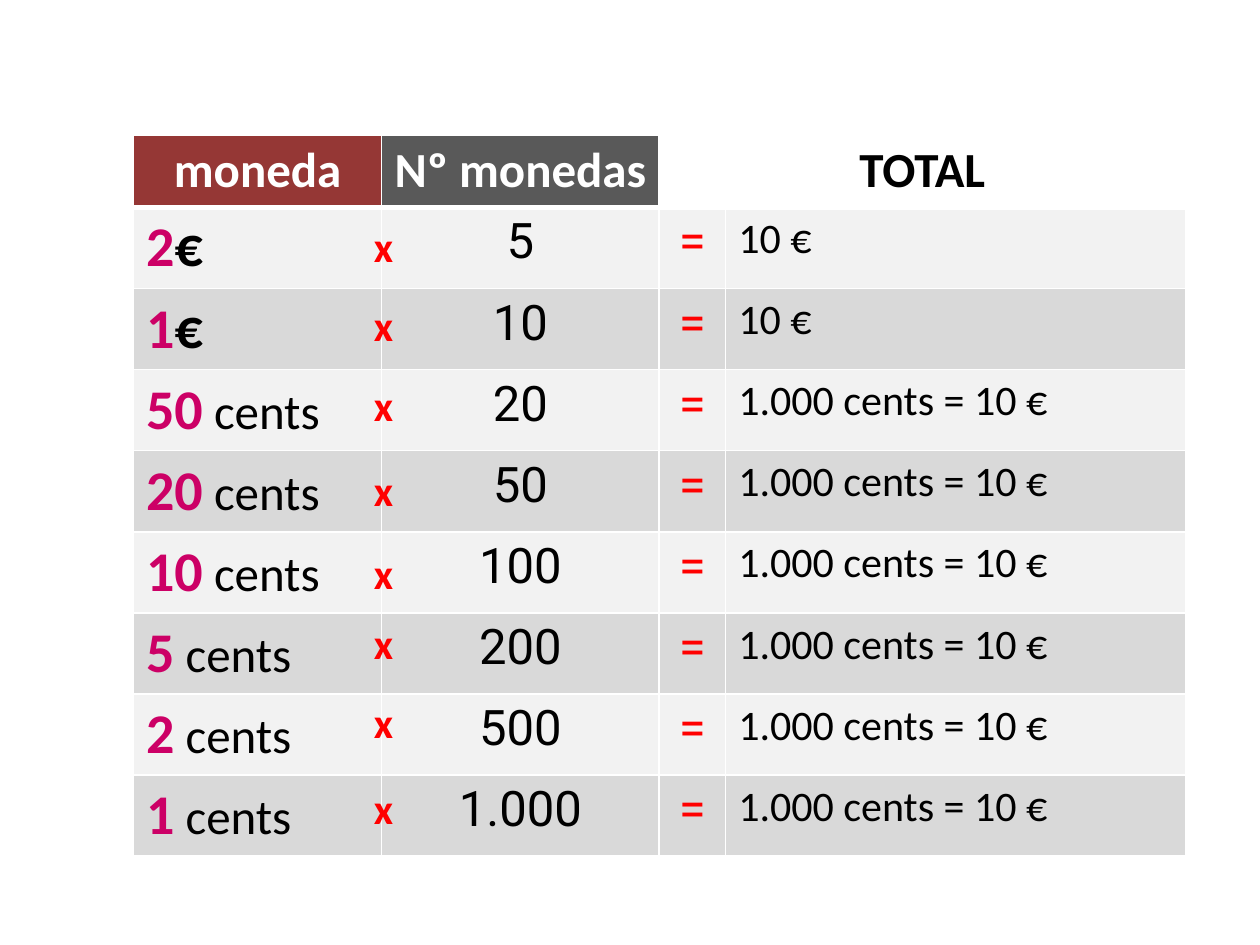
"""Build a slide with a table of coins that add up to ten euros."""
import lxml.etree
import pptx
import pptx.dml.color
import pptx.enum.text
import pptx.oxml.ns
import pptx.util

COLORS = {
    "white": "FFFFFF", "black": "000000", "coin": "CC0066", "sign": "FF0000",
    "coin_header": "953735", "count_header": "595959",
    "light_row": "F2F2F2", "dark_row": "D9D9D9",
}
COLUMN_WIDTHS = [1.97, 2.2, 0.53, 3.65]
HEADER_HEIGHT, ROW_HEIGHT = 0.57, 0.63
TABLE_LEFT, TABLE_TOP = 1.06, 1.07
HEADERS = [
    ("moneda", "white", "coin_header"),
    ("Nº monedas", "white", "count_header"),
    ("TOTAL", "black", "white"),
]
EUROS, CENTS = "10 €", "1.000 cents = 10 €"
COINS = [
    ("2", "€", "5", EUROS), ("1", "€", "10", EUROS),
    ("50", " cents", "20", CENTS), ("20", " cents", "50", CENTS),
    ("10", " cents", "100", CENTS), ("5", " cents", "200", CENTS),
    ("2", " cents", "500", CENTS), ("1", " cents", "1.000", CENTS),
]
TIMES_TOPS = [1.7, 2.33, 2.96, 3.64, 4.3, 4.85, 5.48, 6.16]


def rgb(name):
    return pptx.dml.color.RGBColor.from_string(COLORS[name])


def format_font(font, size, color, bold=False, family="Calibri"):
    font.size = pptx.util.Pt(size)
    font.color.rgb = rgb(color)
    font.bold = bold
    font.name = family


def style_cell(cell, fill, bottom_width=1):
    properties = cell._tc.get_or_add_tcPr()
    for side, width in (("L", 1), ("R", 1), ("T", 1), ("B", bottom_width)):
        line = lxml.etree.SubElement(
            properties, pptx.oxml.ns.qn(f"a:ln{side}"), w=str(pptx.util.Pt(width)))
        solid = lxml.etree.SubElement(line, pptx.oxml.ns.qn("a:solidFill"))
        lxml.etree.SubElement(solid, pptx.oxml.ns.qn("a:srgbClr"), val=COLORS["white"])
    cell.fill.solid()
    cell.fill.fore_color.rgb = rgb(fill)


def write_cell(cell, text, size, color, bold=False, family="Calibri", centered=True):
    paragraph = cell.text_frame.paragraphs[0]
    paragraph.text = text
    if centered:
        paragraph.alignment = pptx.enum.text.PP_ALIGN.CENTER
    format_font(paragraph.font, size, color, bold, family)


def write_coin(cell, value, unit):
    paragraph = cell.text_frame.paragraphs[0]
    is_euro = unit == "€"
    for text, size, color, bold in (
            (value, 32, "coin", True),
            (unit, 32 if is_euro else 28, "black", is_euro)):
        run = paragraph.add_run()
        run.text = text
        format_font(run.font, size, color, bold)


def add_coin_table(slide):
    table = slide.shapes.add_table(
        len(COINS) + 1, len(COLUMN_WIDTHS),
        pptx.util.Inches(TABLE_LEFT), pptx.util.Inches(TABLE_TOP),
        pptx.util.Inches(sum(COLUMN_WIDTHS)),
        pptx.util.Inches(HEADER_HEIGHT + ROW_HEIGHT * len(COINS))).table
    for column, width in zip(table.columns, COLUMN_WIDTHS):
        column.width = pptx.util.Inches(width)
    for index, row in enumerate(table.rows):
        row.height = pptx.util.Inches(ROW_HEIGHT if index else HEADER_HEIGHT)

    table.cell(0, 2).merge(table.cell(0, 3))
    style_cell(table.cell(0, 3), "white", bottom_width=3)
    for index, (text, color, fill) in enumerate(HEADERS):
        style_cell(table.cell(0, index), fill, bottom_width=3)
        write_cell(table.cell(0, index), text, 28, color, bold=True)

    for index, (value, unit, count, total) in enumerate(COINS, start=1):
        cells = [table.cell(index, column) for column in range(len(COLUMN_WIDTHS))]
        for cell in cells:
            style_cell(cell, "light_row" if index % 2 else "dark_row")
        write_coin(cells[0], value, unit)
        write_cell(cells[1], count, 28, "black", family="Roboto")
        write_cell(cells[2], "=", 28, "sign", family="Roboto")
        write_cell(cells[3], total, 24, "black", centered=False)


def add_times_sign(slide, top):
    box = slide.shapes.add_textbox(*map(pptx.util.Inches, (2.87, top, 0.47, 0.5)))
    frame = box.text_frame
    frame.word_wrap = True
    frame.auto_size = pptx.enum.text.MSO_AUTO_SIZE.SHAPE_TO_FIT_TEXT
    paragraph = frame.paragraphs[0]
    paragraph.text = "x"
    format_font(paragraph.font, 24, "sign", bold=True)


def main():
    presentation = pptx.Presentation()
    presentation.slide_width = pptx.util.Inches(10)
    presentation.slide_height = pptx.util.Inches(7.5)
    slide = presentation.slides.add_slide(presentation.slide_layouts[6])
    add_coin_table(slide)
    for top in TIMES_TOPS:
        add_times_sign(slide, top)
    presentation.save("out.pptx")


if __name__ == "__main__":
    main()
